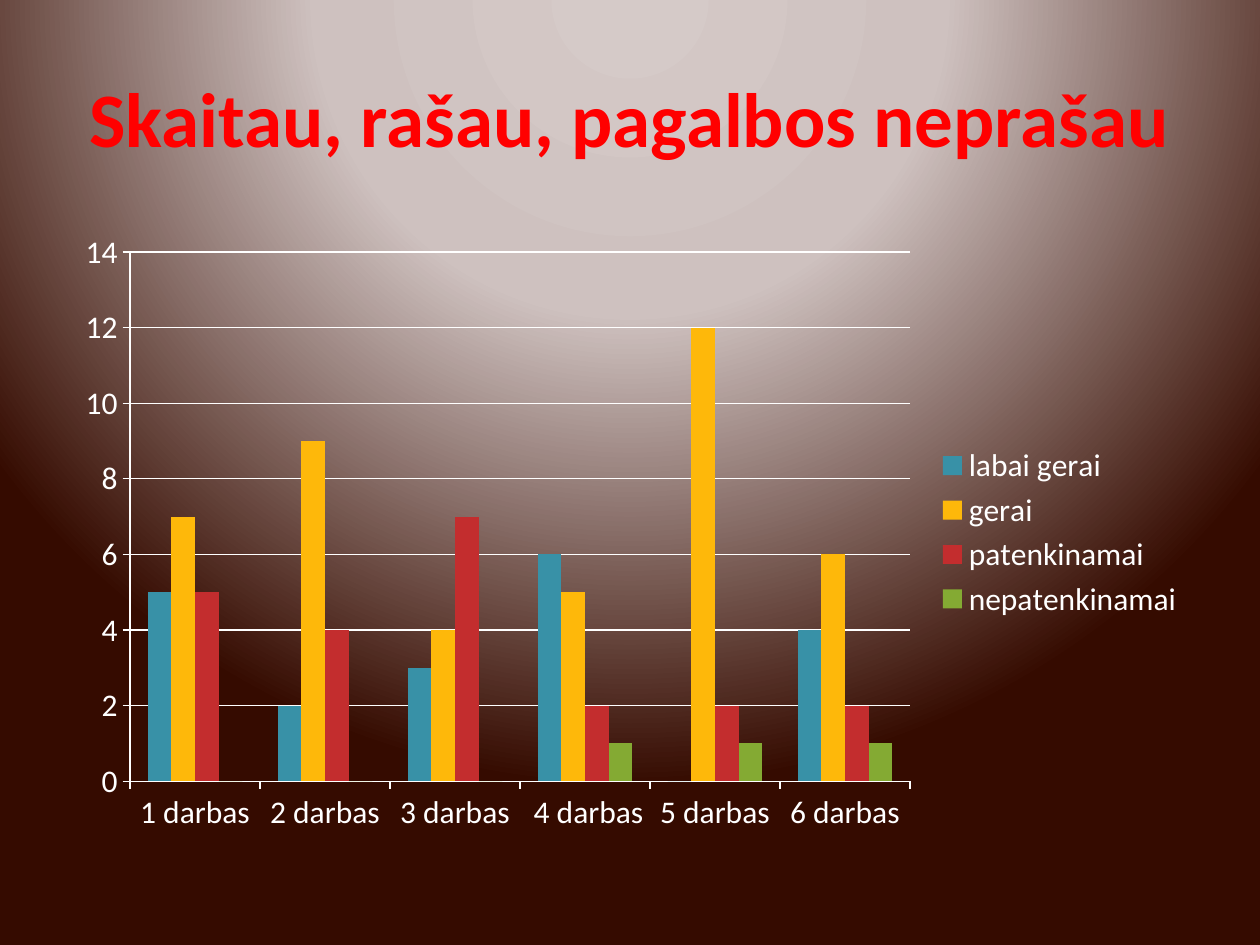
"""Build a slide with a clustered column chart of pupils' results."""
import dataclasses

import lxml.etree
import pptx
import pptx.chart.data
import pptx.dml.color
import pptx.enum.chart
import pptx.enum.text
import pptx.oxml
import pptx.oxml.ns
import pptx.util

Inches = pptx.util.Inches
FONT = "Calibri"
COLORS = {
    "title": "FF0000",
    "text": "FFFFFF",
    "centre": "D5CAC8",
    "glow": "CEC1BF",
    "edge": "350B00",
    "blue": "3891A7",
    "yellow": "FEB80A",
    "red": "C32D2E",
    "green": "84AA33",
}


@dataclasses.dataclass
class Grade:
    name: str
    values: tuple[int, ...]
    color: str


TASKS = ("1 darbas", "2 darbas", "3 darbas", " 4 darbas", "5 darbas", "6 darbas")
GRADES = (
    Grade("labai gerai", (5, 2, 3, 6, 0, 4), "blue"),
    Grade("gerai", (7, 9, 4, 5, 12, 6), "yellow"),
    Grade("patenkinamai", (5, 4, 7, 2, 2, 2), "red"),
    Grade("nepatenkinamai", (0, 0, 0, 1, 1, 1), "green"),
)
STOPS = ((0, "centre"), (40, "glow"), (100, "edge"))


def rgb(name: str) -> pptx.dml.color.RGBColor:
    return pptx.dml.color.RGBColor.from_string(COLORS[name])


def set_font(font, size: float, color: str, bold: bool = False) -> None:
    font.name = FONT
    font.size = pptx.util.Pt(size)
    font.bold = bold
    font.color.rgb = rgb(color)


def paint_background(s) -> None:
    s.background.fill.solid()
    stops = "".join(
        f'<a:gs pos="{pos * 1000}"><a:srgbClr val="{COLORS[color]}"/></a:gs>'
        for pos, color in STOPS
    )
    gradient = pptx.oxml.parse_xml(
        f'<a:gradFill {pptx.oxml.ns.nsdecls("a")} rotWithShape="1">'
        f'<a:gsLst>{stops}</a:gsLst><a:path path="circle">'
        '<a:fillToRect l="50000" t="-80000" r="50000" b="180000"/>'
        "</a:path></a:gradFill>"
    )
    solid = s.element.xpath(".//p:bgPr/a:solidFill")[0]
    solid.getparent().replace(solid, gradient)


def add_title(s, text: str) -> None:
    tf = s.shapes.add_textbox(Inches(0.5), Inches(0.3), Inches(9), Inches(1.25)).text_frame
    tf.word_wrap = True
    tf.vertical_anchor = pptx.enum.text.MSO_ANCHOR.MIDDLE
    p = tf.paragraphs[0]
    p.text = text
    p.alignment = pptx.enum.text.PP_ALIGN.CENTER
    set_font(p.font, 44, "title", True)


def style_line(line) -> None:
    line.color.rgb = rgb("text")
    line.width = pptx.util.Pt(0.75)


def add_results_chart(s) -> None:
    data = pptx.chart.data.CategoryChartData()
    data.categories = TASKS
    for grade in GRADES:
        data.add_series(grade.name, grade.values)
    chart = s.shapes.add_chart(
        pptx.enum.chart.XL_CHART_TYPE.COLUMN_CLUSTERED,
        Inches(0.5), Inches(1.75), Inches(9), Inches(4.95), data,
    ).chart
    set_font(chart.font, 18, "text")
    chart.has_title = False
    chart.has_legend = True
    chart.legend.position = pptx.enum.chart.XL_LEGEND_POSITION.RIGHT
    chart.legend.include_in_layout = False
    for axis in (chart.category_axis, chart.value_axis):
        axis.major_tick_mark = pptx.enum.chart.XL_TICK_MARK.OUTSIDE
        style_line(axis.format.line)
    chart.value_axis.has_major_gridlines = True
    style_line(chart.value_axis.major_gridlines.format.line)
    plot = chart.plots[0]
    plot.vary_by_categories = False
    plot.gap_width = 150
    plot.overlap = 0
    for series, grade in zip(plot.series, GRADES):
        series.format.fill.solid()
        series.format.fill.fore_color.rgb = rgb(grade.color)


def main() -> None:
    prs = pptx.Presentation()
    prs.slide_width, prs.slide_height = Inches(10), Inches(7.5)
    s = prs.slides.add_slide(prs.slide_layouts[6])
    paint_background(s)
    add_title(s, "Skaitau, rašau, pagalbos neprašau")
    add_results_chart(s)
    prs.save("out.pptx")


if __name__ == "__main__":
    main()
